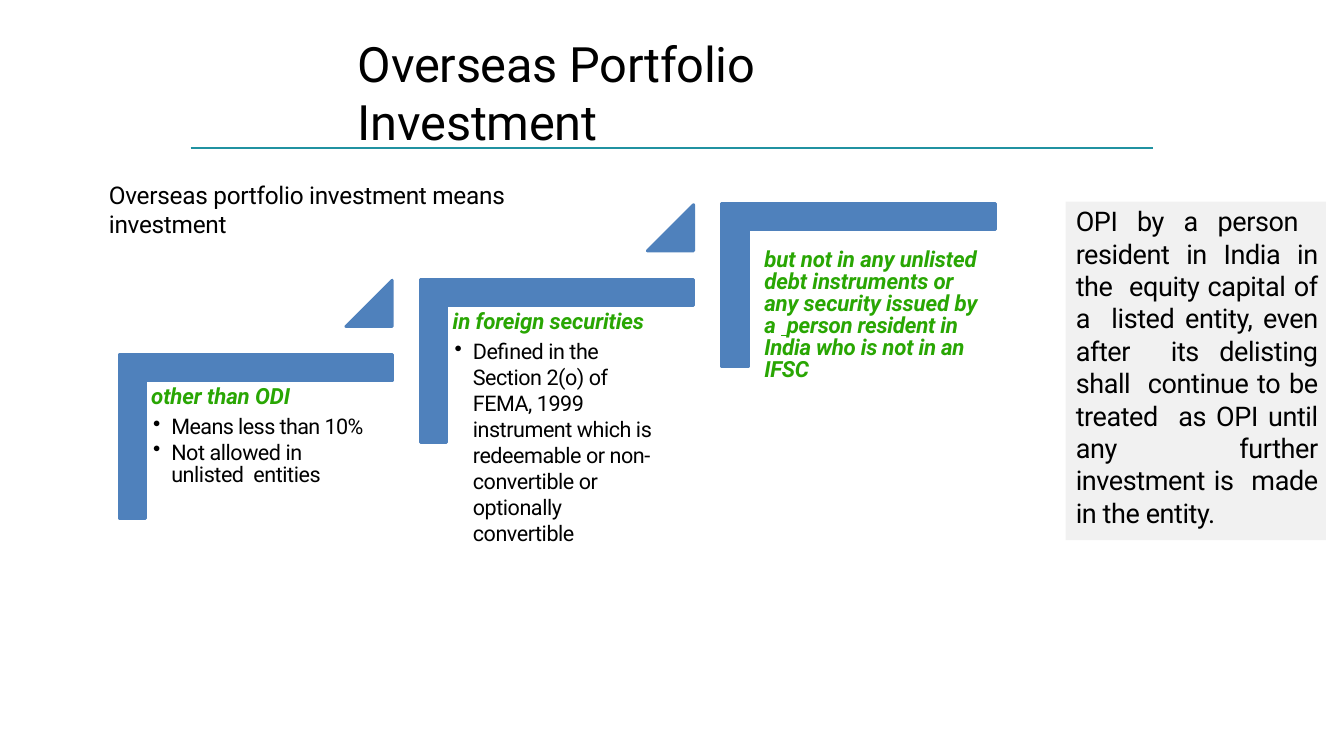
from pptx import Presentation
from pptx.dml.color import RGBColor
from pptx.enum.shapes import MSO_CONNECTOR, MSO_SHAPE
from pptx.enum.text import MSO_ANCHOR, PP_ALIGN
from pptx.oxml.ns import qn
from pptx.util import Inches, Pt
from lxml import etree

BLACK = RGBColor(0x00, 0x00, 0x00)
GREEN = RGBColor(0x29, 0xA6, 0x03)
BLUE = RGBColor(0x4F, 0x81, 0xBC)
TEAL = RGBColor(0x20, 0x92, 0xA1)
GREY = RGBColor(0xF1, 0xF1, 0xF1)
FONT = "Roboto"
STRAIGHT = MSO_CONNECTOR.STRAIGHT
RECTANGLE = MSO_SHAPE.RECTANGLE
TOP = MSO_ANCHOR.TOP
MIDDLE = MSO_ANCHOR.MIDDLE
JUSTIFY = PP_ALIGN.JUSTIFY

STEP_LEFT, STEP_TOP = 1.18, 3.52
STEP_RIGHT, STEP_RISE = 2.99, 0.75
CORNER = [(0, 0), (2.71, 0), (2.71, 0.26), (0.26, 0.26), (0.26, 1.62), (0, 1.62)]
TRIANGLE = [(2.25, -0.28), (2.71, -0.74), (2.71, -0.28)]
HEADING = {"size": 15.9, "color": GREEN, "bold": True, "italic": True}

STEPS = [
    {
        "box": (1.5, 3.73, 2.14, 1.12),
        "heading": "other than ODI",
        "bullets": [
            ("Means less than 10%", 18.4, 3.1, -0.4),
            ("Not allowed in unlisted  entities", 15.7, 2.8, -0.3),
        ],
    },
    {
        "box": (4.49, 2.99, 2.08, 1.93),
        "heading": "in foreign securities",
        "bullets": [
            ("Defined in the Section 2(o) of FEMA, 1999 instrument which is  "
             "redeemable or non-  convertible or optionally  convertible", None, 3.1, -0.3),
        ],
    },
]


def add_text_box(slide, left, top, width, height, inset=0.01, anchor=TOP):
    box = slide.shapes.add_textbox(Inches(left), Inches(top), Inches(width), Inches(height))
    frame = box.text_frame
    frame.word_wrap = True
    frame.vertical_anchor = anchor
    frame.margin_left = frame.margin_right = frame.margin_bottom = 0
    frame.margin_top = Inches(inset)
    return frame


def write(paragraph, text, size, color=BLACK, bold=False, italic=False,
          underline=False, spacing=-0.2):
    run = paragraph.add_run()
    run.text = text
    font = run.font
    font.name = FONT
    font.size = Pt(size)
    font.color.rgb = color
    font.bold = bold
    font.italic = italic
    font.underline = underline
    run._r.get_or_add_rPr().set("spc", str(round(spacing * 100)))


def add_bullet(frame, text, line_height, space_before, spacing):
    paragraph = frame.add_paragraph()
    paragraph.space_before = Pt(space_before)
    if line_height:
        paragraph.line_spacing = Pt(line_height)
    properties = paragraph._p.get_or_add_pPr()
    properties.set("marL", str(Inches(0.2)))
    properties.set("indent", str(Inches(-0.18)))
    etree.SubElement(properties, qn("a:buChar")).set("char", "•")
    write(paragraph, text, 15.4, spacing=spacing)


def add_outline(slide, left, top, offsets):
    points = [(Inches(left + x), Inches(top + y)) for x, y in offsets]
    builder = slide.shapes.build_freeform(*points[0])
    builder.add_line_segments(points[1:], close=True)
    shape = builder.convert_to_shape()
    shape.shadow.inherit = False
    shape.fill.solid()
    shape.fill.fore_color.rgb = BLUE
    shape.line.color.rgb = BLUE
    shape.line.width = Pt(2)


def add_divider(slide, left, right, top):
    line = slide.shapes.add_connector(
        STRAIGHT, Inches(left), Inches(top), Inches(right), Inches(top))
    line.line.color.rgb = TEAL
    line.line.width = Pt(1)
    etree.SubElement(line._element.spPr, qn("a:effectLst"))


def add_panel(slide, left, top, width, height):
    panel = slide.shapes.add_shape(
        RECTANGLE, Inches(left), Inches(top), Inches(width), Inches(height))
    panel.shadow.inherit = False
    panel.fill.solid()
    panel.fill.fore_color.rgb = GREY
    panel.line.fill.background()


def add_staircase(slide):
    for index in range(3):
        left = STEP_LEFT + index * STEP_RIGHT
        top = STEP_TOP - index * STEP_RISE
        add_outline(slide, left, top, CORNER)
        if index < 2:
            add_outline(slide, left, top, TRIANGLE)


def add_step_text(slide, box, heading, bullets):
    frame = add_text_box(slide, *box, inset=0.06)
    paragraph = frame.paragraphs[0]
    paragraph.space_before = Pt(4.5)
    write(paragraph, heading, spacing=-0.1, **HEADING)
    for bullet in bullets:
        add_bullet(frame, *bullet)


def add_exclusion_text(slide):
    paragraph = add_text_box(slide, 7.58, 2.41, 2.18, 1.42, inset=0.07).paragraphs[0]
    paragraph.space_before = Pt(4.7)
    paragraph.line_spacing = Pt(15.7)
    write(paragraph, "but not in any unlisted  debt instruments or any security issued by a ",
          spacing=-0.1, **HEADING)
    write(paragraph, " ", underline=True, spacing=-0.1, **HEADING)
    write(paragraph, "person resident in India who is not in an IFSC", spacing=-0.2, **HEADING)


def main():
    presentation = Presentation()
    presentation.slide_width = Inches(13.33)
    presentation.slide_height = Inches(7.5)
    slide = presentation.slides.add_slide(presentation.slide_layouts[6])

    title = add_text_box(slide, 3.55, 0.61, 6.22, 0.6, anchor=MIDDLE).paragraphs[0]
    title.space_before = Pt(1)
    write(title, "Overseas Portfolio Investment", 34.8)
    add_divider(slide, 1.89, 11.44, 1.47)

    add_staircase(slide)
    for step in STEPS:
        add_step_text(slide, **step)
    add_exclusion_text(slide)

    add_panel(slide, 10.57, 2, 2.58, 3.36)
    note = add_text_box(slide, 10.67, 2.02, 2.4, 2.94).paragraphs[0]
    note.alignment = JUSTIFY
    note.space_before = Pt(1)
    write(note, "OPI by a person  resident in India in the  equity capital of a  listed "
                "entity, even after  its delisting shall  continue to be treated  as OPI "
                "until any  further investment is  made in the entity.", 19.3, spacing=-0.3)

    intro = add_text_box(slide, 1.08, 1.78, 4.62, 0.6).paragraphs[0]
    intro.space_before = Pt(1)
    write(intro, "Overseas portfolio investment means investment", 17.4)

    presentation.save("out.pptx")


if __name__ == "__main__":
    main()
